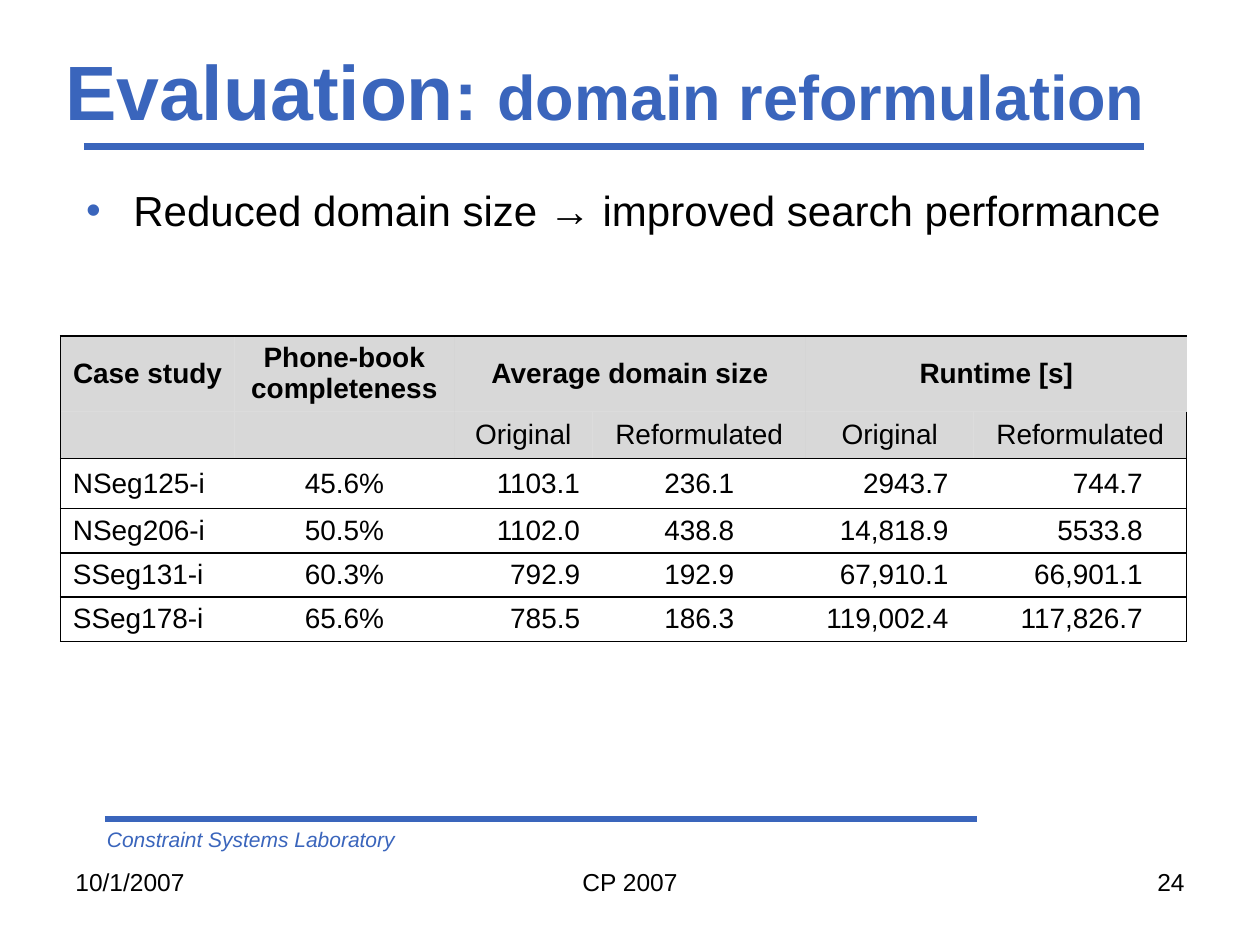
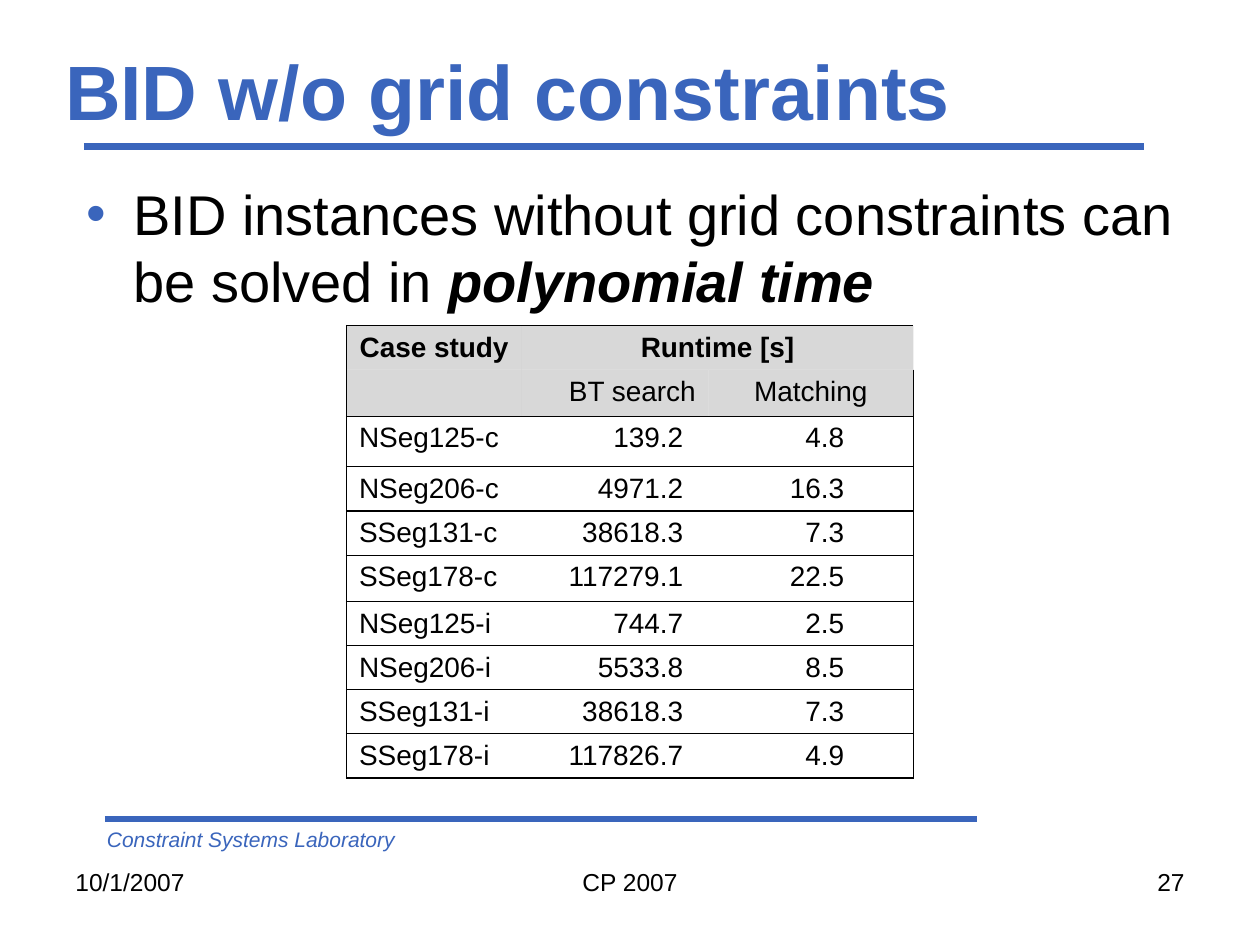
from lxml.etree import SubElement
from pptx import Presentation
from pptx.dml.color import RGBColor
from pptx.enum.shapes import MSO_CONNECTOR
from pptx.enum.text import MSO_ANCHOR, MSO_AUTO_SIZE, PP_ALIGN
from pptx.oxml.ns import qn
from pptx.util import Pt

BLUE = RGBColor(0x3A, 0x65, 0xBC)
BLACK = RGBColor(0, 0, 0)
GRAY = RGBColor(0xB2, 0xB2, 0xB2)
FONT = "Arial"
LEFT, CENTER, RIGHT = PP_ALIGN.LEFT, PP_ALIGN.CENTER, PP_ALIGN.RIGHT
NO_TABLE_STYLE = "{2D5ABB26-0587-4C30-8999-92F81FD0307C}"
INSET = 7.2
ROW = 25.2


def write(p, *parts, size=16, color=BLACK, bold=False, italic=False, align=LEFT):
    """Add runs to a paragraph; a part is text or (text, overrides)."""
    p.alignment = align
    p.space_before = Pt(0)
    base = dict(size=size, color=color, bold=bold, italic=italic)
    for part in parts:
        text, changes = (part, {}) if isinstance(part, str) else part
        style = base | changes
        r = p.add_run()
        r.text = text
        r.font.name = FONT
        r.font.size = Pt(style["size"])
        r.font.bold = style["bold"]
        r.font.italic = style["italic"]
        r.font.color.rgb = style["color"]


def place(sp, box):
    sp.left, sp.top, sp.width, sp.height = map(Pt, box)


def add_label(slide, box, text, **fmt):
    sp = slide.shapes.add_textbox(*map(Pt, box))
    sp.text_frame.word_wrap = True
    write(sp.text_frame.paragraphs[0], text, **fmt)
    return sp


def add_rule(slide, left, right, y):
    line = slide.shapes.add_connector(
        MSO_CONNECTOR.STRAIGHT, Pt(left), Pt(y), Pt(right), Pt(y))
    line.line.color.rgb = BLUE
    line.line.width = Pt(4)
    SubElement(line._element.spPr, qn("a:effectLst"))
    return line


def move_frame_to_layout(slide):
    """Draw the rules and laboratory name once, on the slide's layout."""
    frame = (
        add_rule(slide, 48, 654, 84),
        add_rule(slide, 60, 558, 468),
        add_label(slide, (54, 469, 378, 21.6), "Constraint Systems Laboratory",
                  size=12, color=BLUE, italic=True),
    )
    for sp in frame:
        slide.slide_layout.shapes._spTree.append(sp._element)


def add_title(slide, *parts):
    sp = slide.shapes.title
    place(sp, (30, 24, 648, 54))
    tf = sp.text_frame
    tf.auto_size = MSO_AUTO_SIZE.NONE
    tf.vertical_anchor = MSO_ANCHOR.MIDDLE
    write(tf.paragraphs[0], *parts, size=44, color=BLUE, bold=True)


def add_bullet(slide, box, *parts, size):
    sp = slide.placeholders[1]
    place(sp, box)
    tf = sp.text_frame
    tf.auto_size = MSO_AUTO_SIZE.NONE
    p = tf.paragraphs[0]
    write(p, *parts, size=size)
    pPr = p._p.get_or_add_pPr()
    pPr.set("marL", str(Pt(27)))
    pPr.set("indent", str(-Pt(27)))
    SubElement(SubElement(pPr, qn("a:buClr")), qn("a:srgbClr"), val=str(BLUE))
    SubElement(pPr, qn("a:buChar"), char="•")


def add_footer(slide, number):
    add_label(slide, (36, 492, 168, 37.2), "10/1/2007", size=14)
    add_label(slide, (516, 492, 168, 37.2), str(number), size=14, align=RIGHT)
    add_label(slide, (246, 492, 228, 37.2), "CP 2007", size=14, align=CENTER)


def set_borders(cell, sides):
    """Draw the named sides (L, R, T, B) and clear the others."""
    tcPr = cell._tc.get_or_add_tcPr()
    for i, side in enumerate("LRTB"):
        ln = SubElement(tcPr, qn(f"a:ln{side}"), w=str(Pt(0.75)))
        if side in sides:
            fill = SubElement(ln, qn("a:solidFill"))
            SubElement(fill, qn("a:srgbClr"), val=str(BLACK))
        else:
            SubElement(ln, qn("a:noFill"))
        tcPr.insert(i, ln)


def shade(cell):
    cell.fill.solid()
    cell.fill.fore_color.rgb = GRAY
    color = cell._tc.tcPr.find(".//" + qn("a:srgbClr"))
    SubElement(color, qn("a:alpha"), val="50000")


def fill_cell(cell, text, **fmt):
    tf = cell.text_frame
    for i, line in enumerate(text.split("\n")):
        p = tf.add_paragraph() if i else tf.paragraphs[0]
        if line:
            write(p, line, **fmt)
        else:
            SubElement(p._p, qn("a:endParaRPr"), sz="1600")


def add_results(slide, box, widths, heights, rows, columns, merges, anchor,
                subhead_aligns):
    """Table with two shaded header rows; columns hold (align, right inset)."""
    frame = slide.shapes.add_table(len(rows), len(widths), *map(Pt, box))
    table = frame.table
    table.first_row = table.horz_banding = False
    table._tbl.tblPr.find(qn("a:tableStyleId")).text = NO_TABLE_STYLE
    for column, width in zip(table.columns, widths):
        column.width = Pt(width)
    for row, height in zip(table.rows, heights):
        row.height = Pt(height)
    last = len(widths) - 1
    for r, values in enumerate(rows):
        for c, text in enumerate(values):
            cell = table.cell(r, c)
            cell.vertical_anchor = anchor
            align, inset = columns[c]
            if r < 2:
                align, inset = (subhead_aligns[c] if r else CENTER), INSET
                shade(cell)
            cell.margin_right = Pt(inset)
            fill_cell(cell, text, bold=r == 0, align=align)
            sides = ("T", "B")[r] if r < 2 else "TB"
            sides += "L" * (c == 0) + "R" * (c == last)
            set_borders(cell, sides)
    for c in merges:
        table.cell(0, c).merge(table.cell(0, c + 1))


def domain_slide(slide):
    add_title(slide, "Evaluation", (": ", dict(size=40)),
              ("domain reformulation", dict(size=36)))
    add_bullet(slide, (42, 102, 642, 45),
               "Reduced domain size → improved search performance", size=24)
    rows = [
        ("Case study", "Phone-book\ncompleteness", "Average domain size", "",
         "Runtime [s]", ""),
        ("", "", "Original", "Reformulated", "Original", "Reformulated"),
        ("NSeg125-i", "45.6%", "1103.1", "236.1", "2943.7", "744.7"),
        ("NSeg206-i", "50.5%", "1102.0", "438.8", "14,818.9", "5533.8"),
        ("SSeg131-i", "60.3%", "792.9", "192.9", "67,910.1", "66,901.1"),
        ("SSeg178-i", "65.6%", "785.5", "186.3", "119,002.4", "117,826.7"),
    ]
    add_results(
        slide, (34.5, 192, 644.4, 172.8),
        widths=(99.6, 125.4, 79.2, 121.8, 96, 121.8),
        heights=(43.2, ROW, 28.8, ROW, ROW, ROW), rows=rows,
        columns=((LEFT, INSET), (CENTER, INSET), (RIGHT, INSET),
                 (CENTER, INSET), (RIGHT, 14.4), (RIGHT, 25.2)),
        merges=(2, 4), anchor=MSO_ANCHOR.MIDDLE, subhead_aligns=[CENTER] * 6)
    add_footer(slide, 24)


def grid_slide(slide):
    add_title(slide, "BID w/o grid constraints")
    add_bullet(slide, (42, 99, 642, 354),
               "BID instances without grid constraints can be solved in ",
               ("polynomial time", dict(bold=True, italic=True)), size=32)
    rows = [
        ("Case study", "Runtime [s]", ""),
        ("", "BT search", "Matching"),
        ("NSeg125-c", "139.2", "4.8"),
        ("NSeg206-c", "4971.2", "16.3"),
        ("SSeg131-c", "38618.3", "7.3"),
        ("SSeg178-c", "117279.1", "22.5"),
        ("NSeg125-i", "744.7", "2.5"),
        ("NSeg206-i", "5533.8", "8.5"),
        ("SSeg131-i", "38618.3", "7.3"),
        ("SSeg178-i", "117826.7", "4.9"),
    ]
    add_results(
        slide, (198, 186, 324, 256.8), widths=(100.2, 106.6, 117.2),
        heights=[ROW] * 2 + [28.8, ROW, ROW, 26.6] + [ROW] * 4, rows=rows,
        columns=((LEFT, INSET), (RIGHT, 14.4), (RIGHT, 39.6)),
        merges=(1,), anchor=MSO_ANCHOR.TOP,
        subhead_aligns=(CENTER, RIGHT, CENTER))
    add_footer(slide, 27)


def main():
    prs = Presentation()
    prs.slide_width, prs.slide_height = Pt(720), Pt(540)
    layout = prs.slide_layouts[1]
    first = prs.slides.add_slide(layout)
    move_frame_to_layout(first)
    domain_slide(first)
    grid_slide(prs.slides.add_slide(layout))
    prs.save("out.pptx")


if __name__ == "__main__":
    main()
